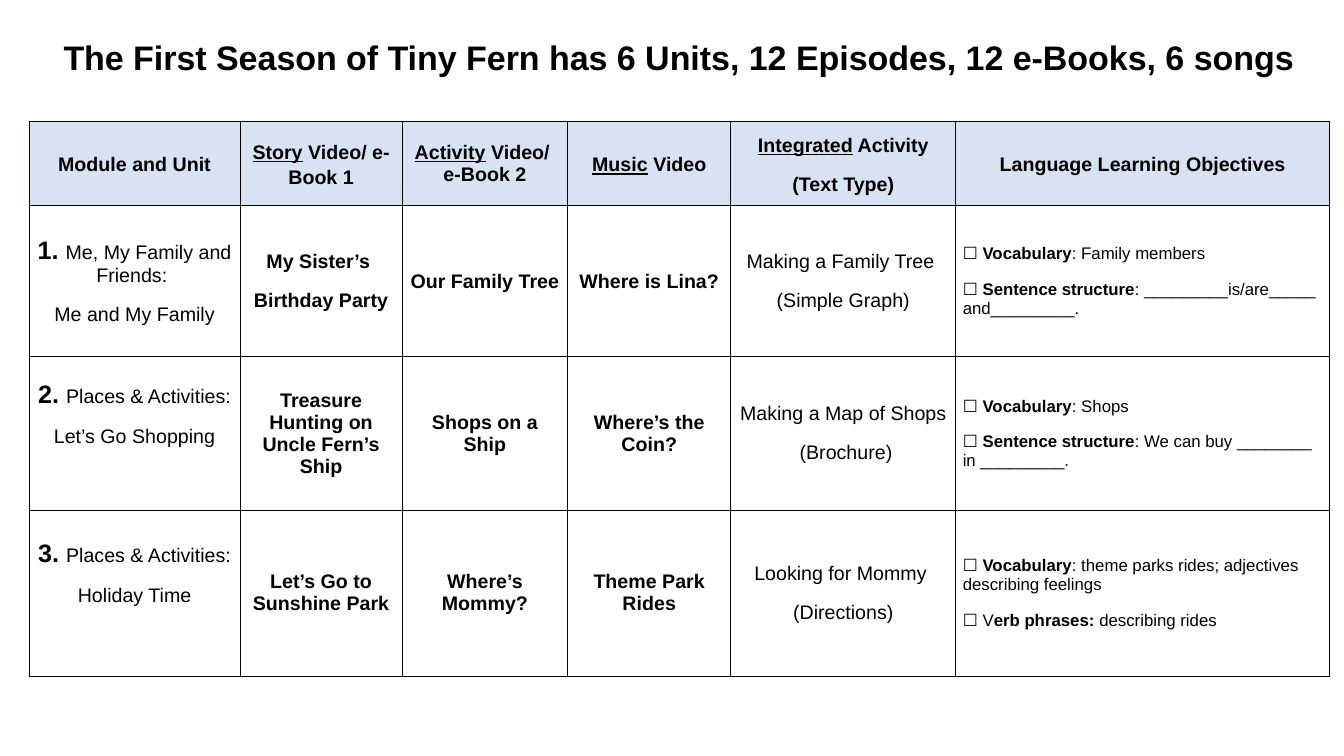
from pptx import Presentation
from pptx.dml.color import RGBColor
from pptx.enum.text import MSO_ANCHOR, PP_ALIGN
from pptx.oxml import parse_xml
from pptx.oxml.ns import nsdecls
from pptx.util import Inches, Pt

BLACK = RGBColor(0, 0, 0)
BLUE = RGBColor(0xD9, 0xE2, 0xF3)

WIDTHS = [2.09, 1.61, 1.64, 1.62, 2.23, 3.71]
HEIGHTS = [0.84, 1.5, 1.52, 1.65]

# Asterisks enclose the stressed part of a paragraph
ROWS = [
    ["Module and Unit", "*Story* Video/ e-Book 1",
     "*Activity* Video/ \ne-Book 2", "*Music* Video",
     "*Integrated* Activity\n(Text Type)", "Language Learning Objectives"],
    ["*1. *Me, My Family and Friends: \nMe and My Family",
     "My Sister’s \nBirthday Party", "Our Family Tree", "Where is Lina?",
     "Making a Family Tree \n(Simple Graph)",
     "☐ *Vocabulary*: Family members\n"
     "☐ *Sentence structure*: _________is/are_____ and_________."],
    ["*2. *Places & Activities:\nLet’s Go Shopping",
     "Treasure Hunting on Uncle Fern’s Ship", "Shops on a Ship",
     "Where’s the Coin?", "Making a Map of Shops\n (Brochure)",
     "☐ *Vocabulary*: Shops\n"
     "☐ *Sentence structure*: We can buy ________ in _________."],
    ["*3. *Places & Activities:\nHoliday Time", "Let’s Go to Sunshine Park",
     "Where’s Mommy?", "Theme Park Rides",
     "Looking for Mommy \n(Directions)",
     "☐ *Vocabulary*: theme parks rides; adjectives describing feelings\n"
     "☐ V*erb phrases:* describing rides"],
]


def add_run(para, text, size, bold, under=False):
    run = para.add_run()
    run.text = text
    font = run.font
    font.name = "Arial"
    font.size = Pt(size)
    font.bold = bold
    font.underline = under
    font.color.rgb = BLACK


def add_edges(cell):
    """Draw a thin black line on all four sides of a cell."""
    props = cell._tc.get_or_add_tcPr()
    for spot, side in enumerate(("lnL", "lnR", "lnT", "lnB")):
        props.insert(spot, parse_xml(
            f'<a:{side} {nsdecls("a")} w="{Pt(0.68)}"><a:solidFill>'
            f'<a:srgbClr val="{BLACK}"/></a:solidFill></a:{side}>'))


prs = Presentation()
prs.slide_width = Inches(13.33)
prs.slide_height = Inches(7.5)
slide = prs.slides.add_slide(prs.slide_layouts[6])

# Title
box = slide.shapes.add_textbox(Inches(0.24), Inches(0.19), Inches(12.99), Inches(0.75))
frame = box.text_frame
frame.word_wrap = True
frame.vertical_anchor = MSO_ANCHOR.MIDDLE
frame.margin_left = frame.margin_right = Inches(0.13)
frame.margin_top = frame.margin_bottom = Inches(0.13)
para = frame.paragraphs[0]
para.alignment = PP_ALIGN.CENTER
add_run(para, "The First Season of Tiny Fern has 6 Units, 12 Episodes, "
        "12 e-Books, 6 songs", 24.3, True)

# Table of units
table = slide.shapes.add_table(
    len(ROWS), len(WIDTHS), Inches(0.29), Inches(1.2),
    Inches(sum(WIDTHS)), Inches(sum(HEIGHTS))).table
table.horz_banding = False
for col, width in zip(table.columns, WIDTHS):
    col.width = Inches(width)
for row, height in zip(table.rows, HEIGHTS):
    row.height = Inches(height)

for r, texts in enumerate(ROWS):
    for c, text in enumerate(texts):
        head = r == 0
        goals = c == 5 and not head
        cell = table.cell(r, c)
        cell.vertical_anchor = MSO_ANCHOR.MIDDLE
        cell.margin_left = cell.margin_right = Inches(0.07)
        cell.margin_top = cell.margin_bottom = Inches(0.08 if head else 0.1)
        if c == 0 and r > 1:
            cell.margin_bottom = Inches(0.49)
        if head:
            cell.fill.solid()
            cell.fill.fore_color.rgb = BLUE
        else:
            cell.fill.background()
        add_edges(cell)

        for p, line in enumerate(text.split("\n")):
            para = cell.text_frame.paragraphs[0] if p == 0 else cell.text_frame.add_paragraph()
            para.alignment = PP_ALIGN.LEFT if goals else PP_ALIGN.CENTER
            if head and c != 2:
                para.line_spacing = 1.15
            if p > 0 and not (head and c == 2):
                para.space_before = Pt(10 if head else 12)
            for i, part in enumerate(line.split("*")):
                if not part:
                    continue
                stress = i % 2 == 1
                size = 12 if goals else 18 if stress and c == 0 else 14
                bold = head or stress or c in (1, 2, 3)
                add_run(para, part, size, bold, head and stress)

prs.save("out.pptx")
